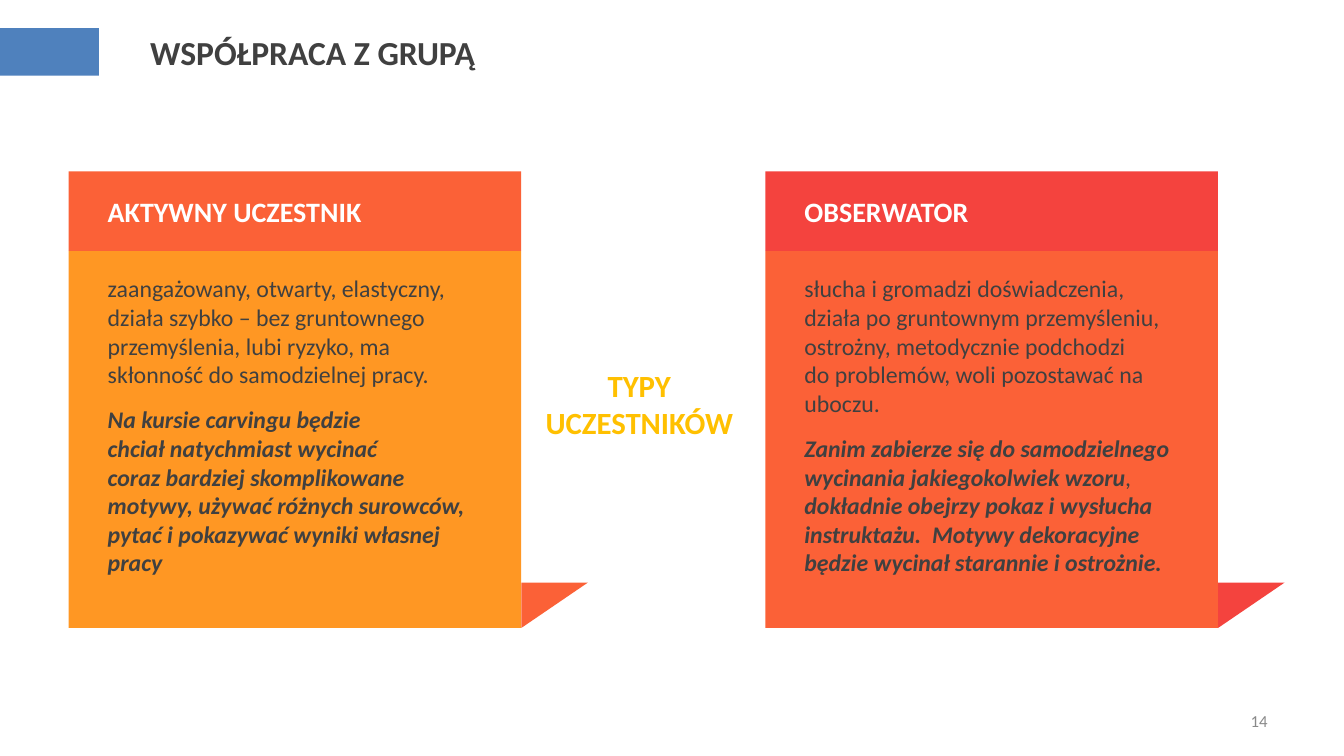
from dataclasses import dataclass

from lxml import etree
from pptx import Presentation
from pptx import util as u
from pptx.dml.color import RGBColor
from pptx.enum import shapes, text
from pptx.oxml.ns import qn

BLUE = RGBColor(0x4F, 0x81, 0xBD)
RED = RGBColor(0xF4, 0x43, 0x3E)
CORAL = RGBColor(0xFB, 0x61, 0x37)
ORANGE = RGBColor(0xFF, 0x88, 0x03)
YELLOW = RGBColor(0xFF, 0xC0, 0x00)
WHITE = RGBColor(0xFF, 0xFF, 0xFF)
DARK = RGBColor(0x40, 0x40, 0x40)
GREY = RGBColor(0x89, 0x89, 0x89)

RECT = shapes.MSO_SHAPE.RECTANGLE
TRIANGLE = shapes.MSO_SHAPE.RIGHT_TRIANGLE
MIDDLE = text.MSO_ANCHOR.MIDDLE
BOLD_ITALIC = dict(bold=True, italic=True)

CARD_TOP, CARD_WIDTH = 1.7, 4.49
HEADER_HEIGHT, BODY_HEIGHT = 0.79, 3.74
FOLD_WIDTH, FOLD_HEIGHT = 0.66, 0.45
TEXT_INDENT = 0.29


@dataclass
class Run:
    words: str
    style: dict


@dataclass
class Card:
    left: float
    header: str
    header_fill: RGBColor
    body_fill: RGBColor
    opacity: int
    paragraphs: list[list[Run]]


CARDS = [
    Card(7.59, "OBSERWATOR", RED, CORAL, 100, [
        [Run("słucha i gromadzi doświadczenia, działa po gruntownym przemyśleniu, "
             "ostrożny, metodycznie podchodzi \ndo problemów, woli pozostawać na uboczu.", {})],
        [Run("Zanim zabierze się do samodzielnego wycinania jakiegokolwiek wzoru", BOLD_ITALIC),
         Run(", ", dict(italic=True)),
         Run("dokładnie obejrzy pokaz i wysłucha instruktażu.  Motywy dekoracyjne "
             "będzie wycinał starannie i ostrożnie.", BOLD_ITALIC)],
    ]),
    Card(0.68, "AKTYWNY UCZESTNIK", CORAL, ORANGE, 87, [
        [Run("zaangażowany, otwarty, elastyczny, działa szybko – bez gruntownego "
             "przemyślenia, lubi ryzyko, ma skłonność do samodzielnej pracy.", {})],
        [Run("Na kursie carvingu będzie \nchciał natychmiast wycinać \n"
             "coraz bardziej skomplikowane motywy, używać różnych surowców, "
             "pytać i pokazywać wyniki własnej pracy", BOLD_ITALIC)],
    ]),
]


def add_block(parent, kind, left: float, top: float, width: float, height: float,
              fill: RGBColor, opacity: int = 100):
    sp = parent.add_shape(kind, *map(u.Inches, (left, top, width, height)))
    sp.shadow.inherit = False
    sp.fill.solid()
    sp.fill.fore_color.rgb = fill
    sp.line.fill.background()
    if opacity < 100:
        color = sp.fill._xPr.find(qn("a:solidFill"))[0]
        etree.SubElement(color, qn("a:alpha"), val=str(opacity * 1000))
    return sp


def add_text(parent, box: tuple, paragraphs: list[list[Run]], size: int, color: RGBColor,
             align=text.PP_ALIGN.LEFT, anchor=text.MSO_ANCHOR.TOP, wrap: bool = True) -> None:
    """Add a text box; a newline inside a run becomes a line break."""
    tf = parent.add_textbox(*map(u.Inches, box)).text_frame
    tf.word_wrap = wrap
    tf.vertical_anchor = anchor
    for i, runs in enumerate(paragraphs):
        p = tf.add_paragraph() if i else tf.paragraphs[0]
        p.alignment = align
        if i < len(paragraphs) - 1:
            p.space_after = u.Pt(12)
        for run in runs:
            for n, line in enumerate(run.words.split("\n")):
                if n:
                    p.add_line_break()
                    etree.SubElement(p._p[-1], qn("a:rPr"), sz=str(size * 100))
                r = p.add_run()
                r.text = line
                font = dict(name="Calibri", size=u.Pt(size)) | run.style
                for key, value in font.items():
                    setattr(r.font, key, value)
                r.font.color.rgb = color


def add_card(slide_shapes, card: Card) -> None:
    body_top = CARD_TOP + HEADER_HEIGHT
    right, bottom = card.left + CARD_WIDTH, body_top + BODY_HEIGHT
    group = slide_shapes.add_group_shape().shapes
    add_block(group, RECT, card.left, body_top, CARD_WIDTH, BODY_HEIGHT,
              card.body_fill, card.opacity)
    add_block(group, RECT, card.left, CARD_TOP, CARD_WIDTH, HEADER_HEIGHT, card.header_fill)
    # The fold is turned a quarter, so its frame is centred on the visible area
    shift = (FOLD_WIDTH - FOLD_HEIGHT) / 2
    fold = add_block(group, TRIANGLE, right + shift, bottom - FOLD_HEIGHT - shift,
                     FOLD_HEIGHT, FOLD_WIDTH, card.header_fill)
    fold.rotation = 90

    text_left = card.left + TEXT_INDENT
    add_text(slide_shapes, (text_left, CARD_TOP, 2.85, HEADER_HEIGHT),
             [[Run(card.header, dict(bold=True))]], 20, WHITE, anchor=MIDDLE)
    add_text(slide_shapes, (text_left, 2.67, 3.87, 3.4), card.paragraphs, 17, DARK)


def main() -> None:
    prs = Presentation()
    prs.slide_width, prs.slide_height = u.Inches(13.33), u.Inches(7.5)
    s = prs.slides.add_slide(prs.slide_layouts[6]).shapes

    add_block(s, RECT, 0, 0.28, 0.98, 0.47, BLUE)
    add_text(s, (1.39, 0.21, 5.99, 0.62), [[Run("WSPÓŁPRACA Z GRUPĄ", dict(bold=True))]],
             24, DARK, anchor=MIDDLE)
    for card in CARDS:
        add_card(s, card)
    add_text(s, (5.3, 3.59, 2.08, 0.84), [[Run("TYPY\nUCZESTNIKÓW", dict(bold=True))]],
             22, YELLOW, align=text.PP_ALIGN.CENTER, wrap=False)
    add_text(s, (9.56, 6.95, 3.11, 0.4), [[Run("14", {})]], 12, GREY,
             align=text.PP_ALIGN.RIGHT, anchor=MIDDLE)
    prs.save("out.pptx")


if __name__ == "__main__":
    main()
